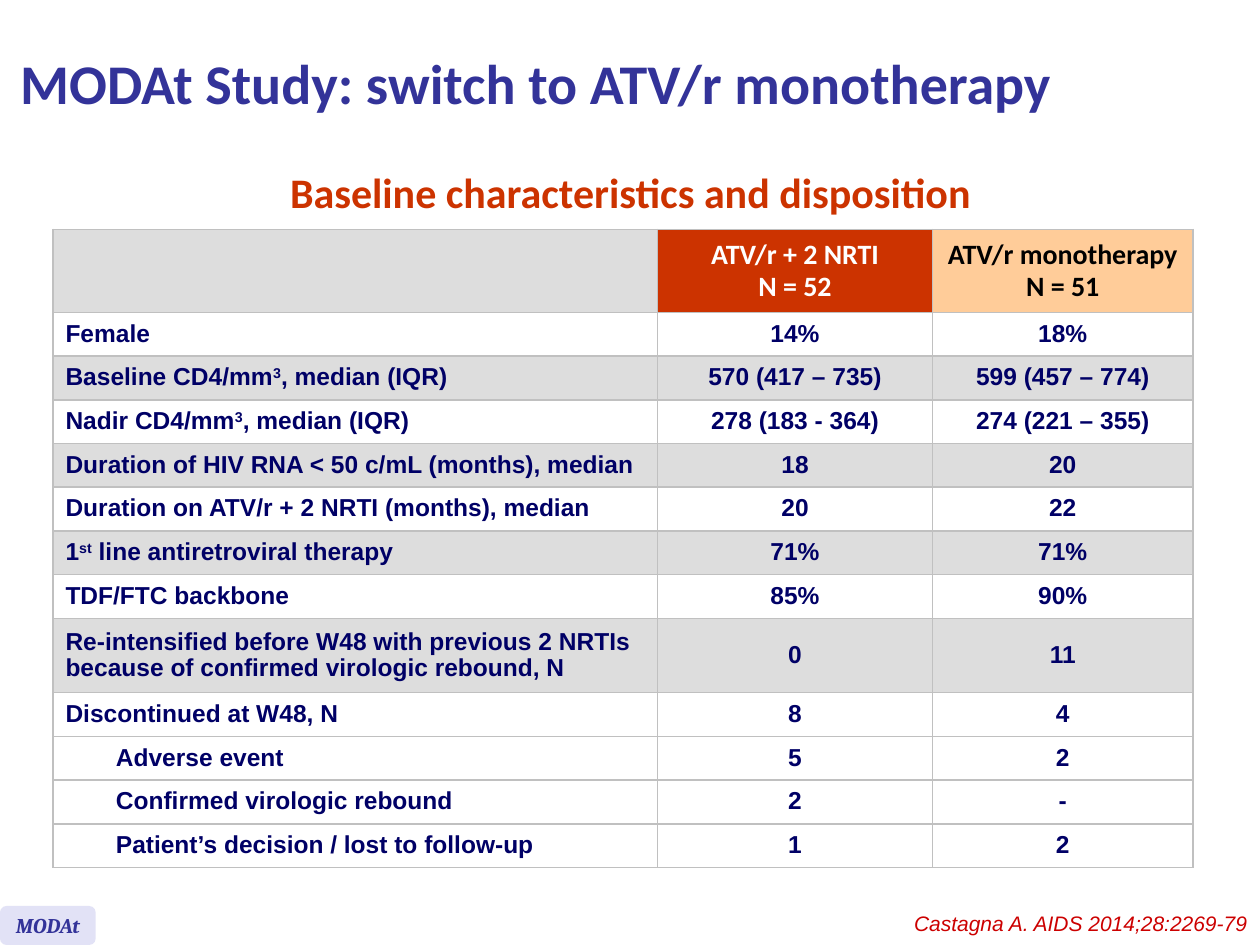
"""Build the MODAt baseline characteristics slide."""
from lxml import etree
from pptx import Presentation, util as u
from pptx.dml.color import RGBColor
from pptx.enum import shapes, text
from pptx.oxml.ns import qn

COLORS = {"indigo": "333399", "navy": "000066", "rust": "CC3300", "peach": "FFCC99",
          "gray": "DDDDDD", "line": "C0C0C0", "white": "FFFFFF", "black": "000000",
          "red": "CC0000", "lavender": "E2E2F6"}
LEFT, CENTER, RIGHT = text.PP_ALIGN.LEFT, text.PP_ALIGN.CENTER, text.PP_ALIGN.RIGHT
MIDDLE, TOP = text.MSO_ANCHOR.MIDDLE, text.MSO_ANCHOR.TOP


def write(frame, content, size=14, font="Arial", color="navy", bold=True, italic=False,
          align=LEFT, anchor=MIDDLE, spacing=None, wrap=True):
    """Fill a text frame; text between carets is superscript."""
    frame.vertical_anchor = anchor
    if wrap is not None:
        frame.word_wrap = wrap
    for number, line in enumerate(content.split("\n")):
        paragraph = frame.add_paragraph() if number else frame.paragraphs[0]
        paragraph.alignment = align
        if spacing:
            paragraph.line_spacing = spacing
        if not line:
            etree.SubElement(paragraph._p, qn("a:endParaRPr"), sz=str(size * 100))
            continue
        for part, words in enumerate(line.split("^")):
            run = paragraph.add_run()
            run.text = words
            run.font.size, run.font.name = u.Pt(size), font
            run.font.bold, run.font.italic = bold, italic
            run.font.color.rgb = RGBColor.from_string(COLORS[color])
            if part % 2:
                run._r.get_or_add_rPr().set("baseline", "30000")


def paint(cell, fill, open_sides=""):
    """Draw the cell's borders, leaving open sides bare, then its fill."""
    properties = cell._tc.get_or_add_tcPr()
    for side in "LRTB":
        border = etree.SubElement(properties, qn(f"a:ln{side}"), w=str(u.Pt(1)))
        if side in open_sides:
            etree.SubElement(border, qn("a:noFill"))
        else:
            solid = etree.SubElement(border, qn("a:solidFill"))
            etree.SubElement(solid, qn("a:srgbClr"), val=COLORS["line"])
    cell.fill.solid()
    cell.fill.fore_color.rgb = RGBColor.from_string(COLORS[fill])


deck = Presentation()
deck.slide_width, deck.slide_height = u.Inches(10), u.Inches(7.5)
slide = deck.slides.add_slide(deck.slide_layouts[5])

title = slide.shapes.title
title.left, title.top, title.width, title.height = map(u.Inches, (0.06, 0.05, 8.96, 1.21))
write(title.text_frame, "MODAt Study: switch to ATV/r monotherapy",
      size=32, font="Calibri", color="indigo")

ROWS = [
    ("Female", "14%", "18%"),
    ("Baseline CD4/mm^3^, median (IQR)", "570 (417 – 735)", "599 (457 – 774)"),
    ("Nadir CD4/mm^3^, median (IQR)", "278 (183 - 364)", "274 (221 – 355)"),
    ("Duration of HIV RNA < 50 c/mL (months), median", "18", "20"),
    ("Duration on ATV/r + 2 NRTI (months), median", "20", "22"),
    ("1^st^ line antiretroviral therapy", "71%", "71%"),
    ("TDF/FTC backbone", "85%", "90%"),
    ("Re-intensified before W48 with previous 2 NRTIs because of confirmed virologic rebound, N",
     "0", "11"),
    ("Discontinued at W48, N", "8", "4"),
    ("Adverse event", "5", "2"),
    ("Confirmed virologic rebound", "2", "-"),
    ("Patient’s decision / lost to follow-up", "1", "2"),
]
TOTAL_ROW, TALL_ROW = 9, 8
HEADER_HEIGHT, TALL_HEIGHT, ROW_HEIGHT = u.Pt(47.5), u.Pt(42.5), u.Pt(25)
heights = [HEADER_HEIGHT] + [ROW_HEIGHT] * len(ROWS)
heights[TALL_ROW] = TALL_HEIGHT
widths = [u.Inches(w) for w in (0.4, 4.4, 2.18, 2.07)]

baseline = slide.shapes.add_table(len(heights), len(widths), u.Inches(0.42), u.Inches(1.82),
                                  sum(widths), sum(heights)).table
for column, width in zip(baseline.columns, widths):
    column.width = width
for row, height in zip(baseline.rows, heights):
    row.height = height

arms = [("ATV/r + 2 NRTI\nN = 52", "white", "rust"),
        ("ATV/r monotherapy\nN = 51", "black", "peach")]
for col, (arm, ink, fill) in enumerate(arms, start=2):
    cell = baseline.cell(0, col)
    write(cell.text_frame, arm, size=16, font="Calibri", color=ink, align=CENTER,
          spacing=0.95, wrap=None)
    cell.vertical_anchor = MIDDLE
    paint(cell, fill)
for col in range(2):
    write(baseline.cell(0, col).text_frame, "", wrap=None)
    paint(baseline.cell(0, col), "gray")

for row, (label, *values) in enumerate(ROWS, start=1):
    detail = row > TOTAL_ROW
    fill = "gray" if row % 2 == 0 and not detail else "white"
    labels = ["", label] if detail else [label, ""]
    for col, content in enumerate(labels + values):
        cell = baseline.cell(row, col)
        write(cell.text_frame, content, align=CENTER if col > 1 else LEFT,
              spacing=0.95, wrap=None)
        cell.vertical_anchor = MIDDLE
        paint(cell, fill, {0: "R", 1: "L"}.get(col, "") if detail else "")
for row in range(TOTAL_ROW + 1):
    baseline.cell(row, 0).merge(baseline.cell(row, 1))

citation = slide.shapes.add_textbox(*map(u.Inches, (6.5, 7.18, 3.5, 0.3)))
write(citation.text_frame, "Castagna A. AIDS 2014;28:2269-79", size=12, color="red",
      bold=False, italic=True, align=RIGHT, anchor=TOP)

caption = slide.shapes.add_textbox(*map(u.Inches, (2.17, 1.46, 5.67, 0.31)))
write(caption.text_frame, "Baseline characteristics and disposition", size=24,
      font="Calibri", color="rust", align=CENTER, spacing=u.Pt(15.2), wrap=False)

badge = slide.shapes.add_shape(shapes.MSO_SHAPE.ROUNDED_RECTANGLE,
                               *map(u.Inches, (0, 7.19, 0.76, 0.31)))
badge.shadow.inherit = False
badge.fill.solid()
badge.fill.fore_color.rgb = RGBColor.from_string(COLORS["lavender"])
badge.line.fill.background()
write(badge.text_frame, "MODAt", size=12, font="Cambria", color="indigo", italic=True,
      align=CENTER, wrap=False)

deck.save("out.pptx")
